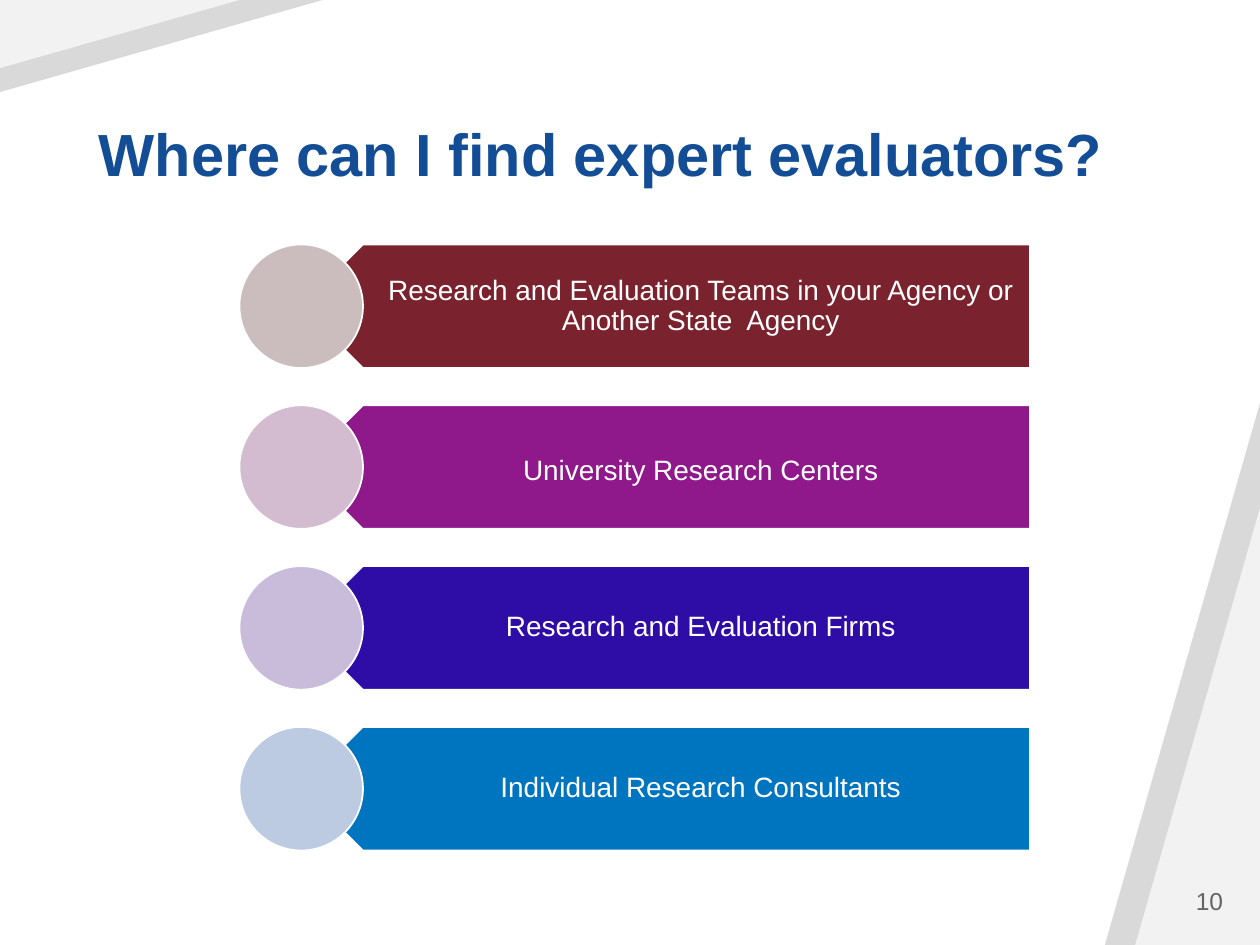
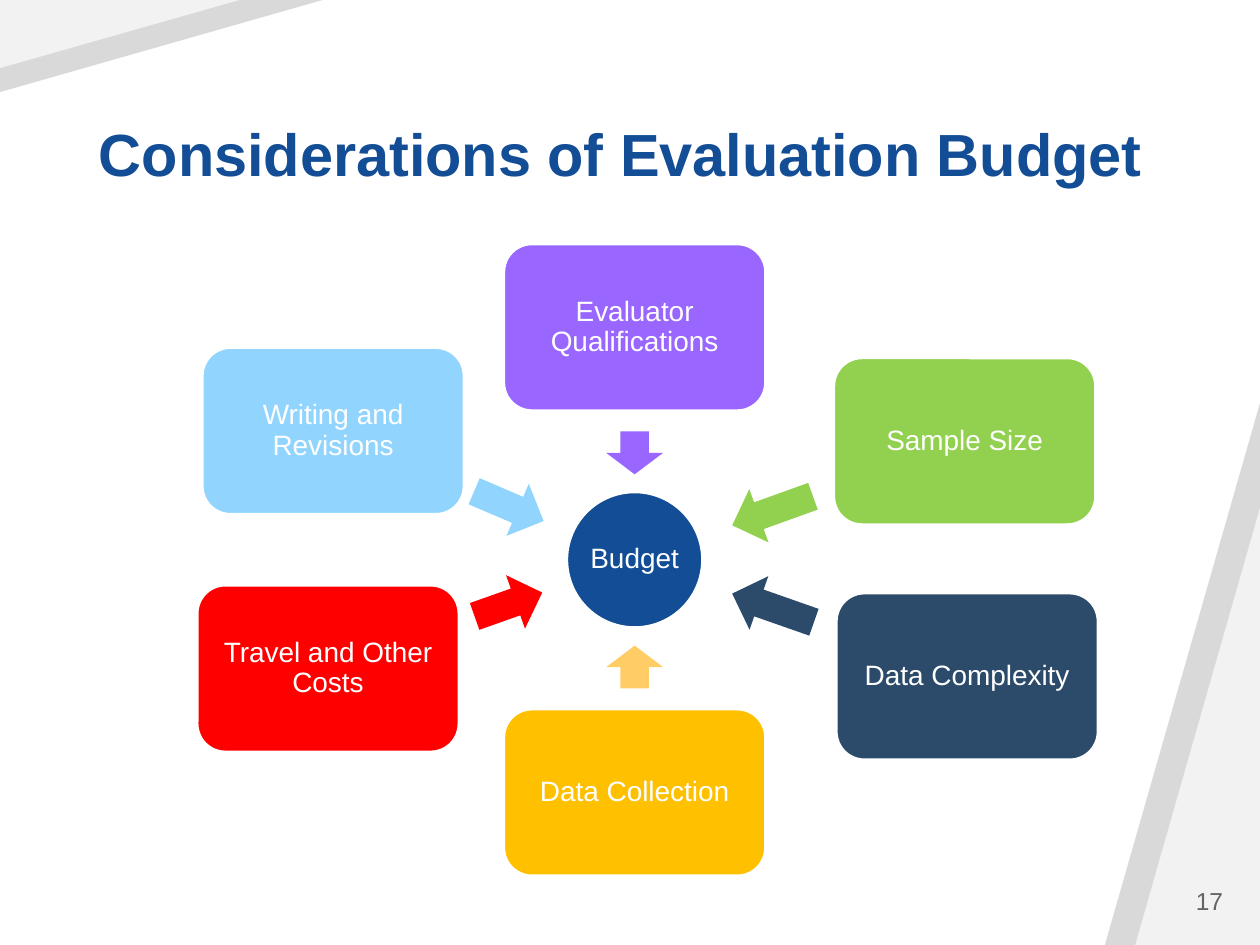
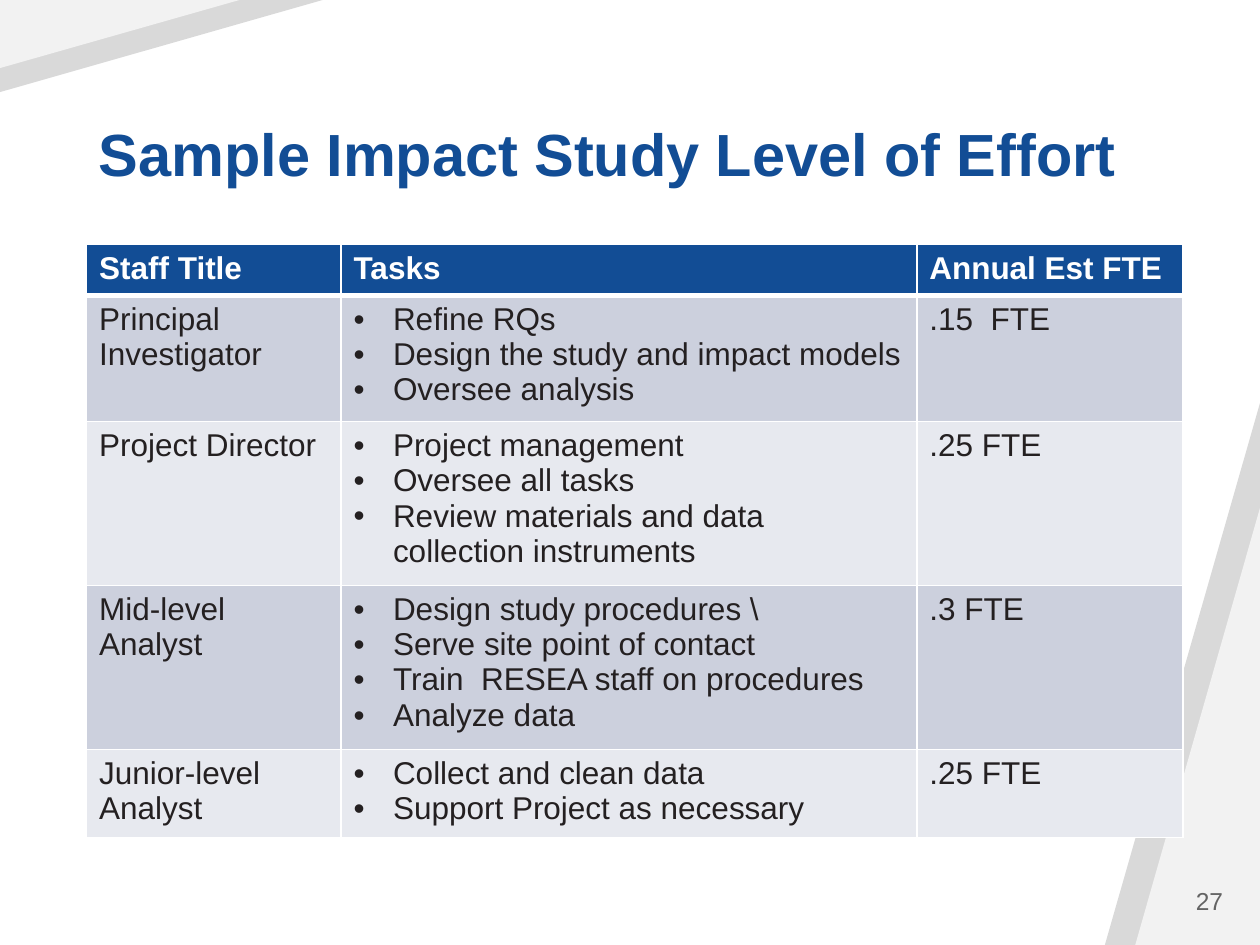
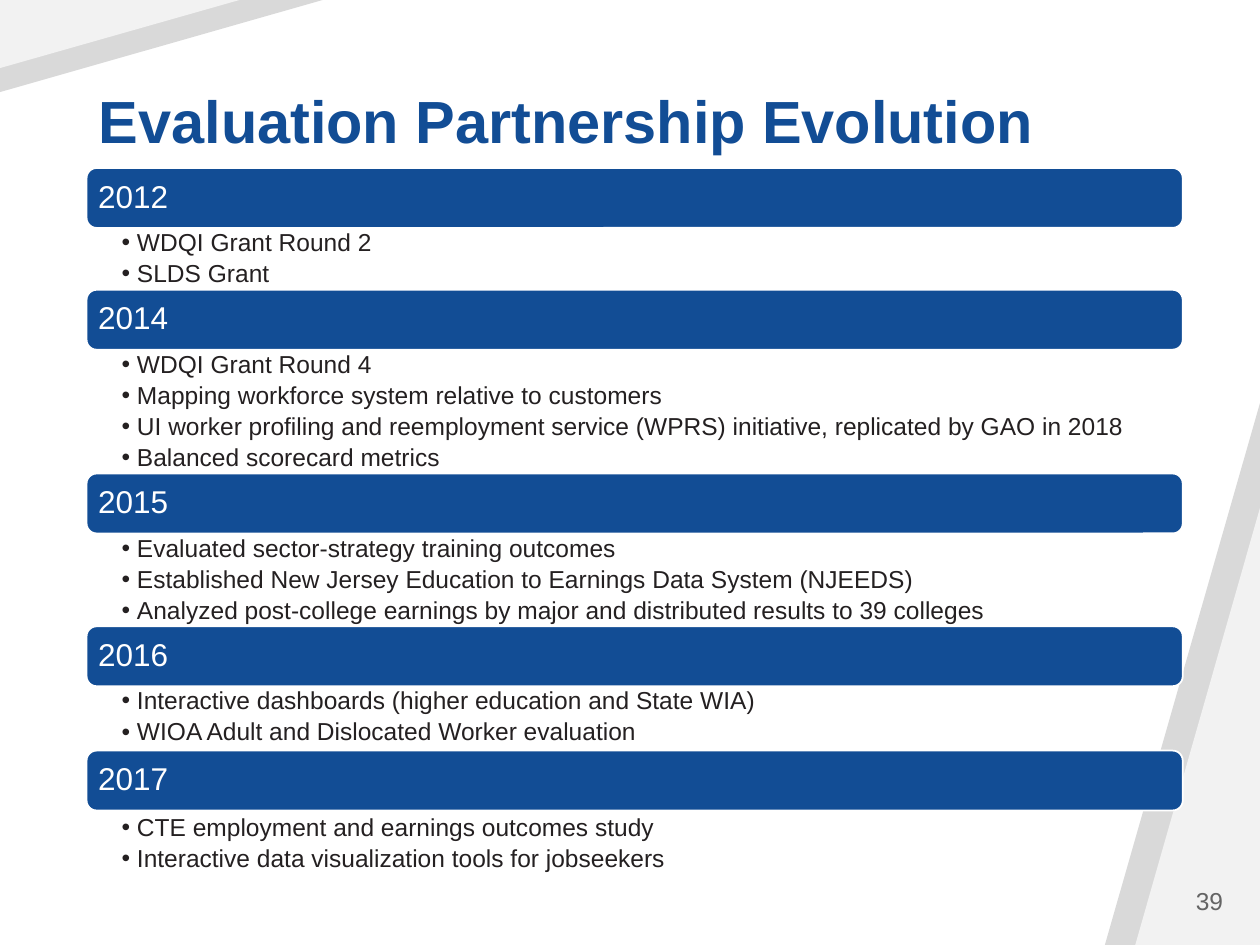
from dataclasses import dataclass
from typing import NamedTuple, Optional, Sequence, Union

import pptx
import pptx.dml.color
import pptx.enum.shapes
import pptx.enum.text
import pptx.oxml.ns
import pptx.presentation
import pptx.shapes.autoshape
import pptx.slide
import pptx.table
import pptx.text.text
import pptx.util
from lxml import etree

Pt = pptx.util.Pt
Shape = pptx.enum.shapes.MSO_SHAPE
Anchor = pptx.enum.text.MSO_ANCHOR
Align = pptx.enum.text.PP_ALIGN


# Theme and records
@dataclass(frozen=True)
class Theme:
    font: str = "Arial"
    blue: str = "124D95"
    white: str = "FFFFFF"
    ink: str = "242021"
    page_grey: str = "646464"
    band_dark: str = "D9D9D9"
    band_light: str = "F2F2F2"
    row_dark: str = "CCD0DD"
    row_light: str = "E7E9EF"
    title_size: float = 34
    heading_size: float = 18
    label_size: float = 16
    small_size: float = 14


THEME = Theme()
CONTENT_LEFT, CONTENT_WIDTH = 49.5, 626.4


class Box(NamedTuple):
    left: float
    top: float
    width: float
    height: float


class Insets(NamedTuple):
    left: float = 7.2
    top: float = 3.6
    right: float = 7.2
    bottom: float = 3.6


class CornerBand(NamedTuple):
    box: Box
    fill: str
    rotation: float


class Source(NamedTuple):
    label: str
    fill: str
    dot_fill: str
    extra_top: float = 0


class Factor(NamedTuple):
    label: str
    left: float
    top: float
    fill: str
    arrow: Box
    rotation: float
    arrow_fill: Optional[str] = None


class Staff(NamedTuple):
    title: str
    tasks: Sequence[str]
    effort: str


class Era(NamedTuple):
    year: str
    events: Sequence[str]
    gap: float = 0


# Slide content
BANDS = [
    CornerBand(Box(631.4, 230.4, 88.6, 309.6), THEME.band_dark, 0),
    CornerBand(Box(648.7, 290.2, 71.3, 249.8), THEME.band_light, 0),
    CornerBand(Box(0, 0, 184.3, 52.6), THEME.band_dark, 180),
    CornerBand(Box(0, 0, 136.8, 38.9), THEME.band_light, 180),
]

SOURCES = [
    Source("Research and Evaluation Teams in your Agency or Another State  Agency",
           "7A232E", "CBBDBE"),
    Source("University Research Centers", "8F198A", "D3BCCF", extra_top=5),
    Source("Research and Evaluation Firms", "2E0DA6", "C9BCDB"),
    Source("Individual Research Consultants", "0075BF", "BCCAE2"),
]

FACTORS = [
    Factor("Evaluator Qualifications", 288.2, 139.7, "9966FF",
           Box(350.4, 242.6, 24.5, 32.4), 270),
    Factor("Sample Size", 476.8, 204.8, "92D050", Box(417, 275.7, 49, 32.4), 340.2),
    Factor("Data Complexity", 478.2, 339.2, "2C4B6A", Box(417, 331.2, 49.5, 32.4), 19.3),
    Factor("Data Collection", 288.2, 405.5, "FFC000",
           Box(350.4, 365, 24.5, 32.4), 90, "FFCC66"),
    Factor("Travel and Other Costs", 113, 334.7, "FF0000",
           Box(270, 329.2, 41, 32.4), 160.5),
    Factor("Writing and Revisions", 115.9, 198.9, "91D5FF",
           Box(269.2, 273, 43.2, 32.4), 203.2),
]

STAFF = [
    Staff("Principal Investigator",
          ["Refine RQs", "Design the study and impact models", "Oversee analysis"],
          ".15  FTE"),
    Staff("Project Director",
          ["Project management", "Oversee all tasks",
           "Review materials and data collection instruments"],
          ".25 FTE"),
    Staff("Mid-level Analyst",
          ["Design study procedures \\", "Serve site point of contact",
           "Train  RESEA staff on procedures", "Analyze data"],
          ".3 FTE"),
    Staff("Junior-level Analyst",
          ["Collect and clean data", "Support Project as necessary"],
          ".25 FTE"),
]

ERAS = [
    Era("2012", ["WDQI Grant Round 2", "SLDS Grant"]),
    Era("2014", [
        "WDQI Grant Round 4",
        "Mapping workforce system relative to customers",
        "UI worker profiling and reemployment service (WPRS) initiative, "
        "replicated by GAO in 2018",
        "Balanced scorecard metrics",
    ]),
    Era("2015", [
        "Evaluated sector-strategy training outcomes",
        "Established New Jersey Education to Earnings Data System (NJEEDS)",
        "Analyzed post-college earnings by major and distributed results to 39 colleges",
    ]),
    Era("2016", [
        "Interactive dashboards (higher education and State WIA)",
        "WIOA Adult and Dislocated Worker evaluation",
    ]),
    Era("2017", [
        "CTE employment and earnings outcomes study",
        "Interactive data visualization tools for jobseekers",
    ], gap=1.4),
]


# Drawing helpers
def rgb(value: str) -> pptx.dml.color.RGBColor:
    return pptx.dml.color.RGBColor.from_string(value)


def add_bullet(para: pptx.text.text._Paragraph, indent: float) -> None:
    props = para._p.get_or_add_pPr()
    props.set("marL", str(Pt(indent)))
    props.set("indent", str(-Pt(indent)))
    font = etree.SubElement(props, pptx.oxml.ns.qn("a:buFont"))
    font.set("typeface", THEME.font)
    mark = etree.SubElement(props, pptx.oxml.ns.qn("a:buChar"))
    mark.set("char", "•")


def write(frame: pptx.text.text.TextFrame, text: Union[str, Sequence[str]], *,
          size: float, color: str, bold: bool = False,
          align: Align = Align.LEFT, line_spacing: Optional[float] = None,
          space_after: Optional[float] = None, bullet_indent: float = 0) -> None:
    lines = [text] if isinstance(text, str) else text
    for index, line in enumerate(lines):
        para = frame.paragraphs[0] if index == 0 else frame.add_paragraph()
        para.alignment = align
        para.line_spacing = line_spacing
        para.space_after = None if space_after is None else Pt(space_after)
        if bullet_indent:
            add_bullet(para, bullet_indent)
        span = para.add_run()
        span.text = line
        span.font.name = THEME.font
        span.font.size = Pt(size)
        span.font.bold = bold
        span.font.color.rgb = rgb(color)


def set_frame(frame: pptx.text.text.TextFrame, insets: Insets, anchor: Anchor) -> None:
    frame.word_wrap = True
    frame.vertical_anchor = anchor
    frame.margin_left, frame.margin_top, frame.margin_right, frame.margin_bottom = map(
        Pt, insets)


def add_text(page: pptx.slide.Slide, box: Box, text: Union[str, Sequence[str]], *,
             insets: Insets = Insets(), anchor: Anchor = Anchor.MIDDLE,
             **text_format) -> None:
    frame = page.shapes.add_textbox(*map(Pt, box)).text_frame
    set_frame(frame, insets, anchor)
    write(frame, text, **text_format)


def add_solid(page: pptx.slide.Slide, kind: Shape, box: Box, fill: str, *,
              rotation: float = 0, outlined: bool = False
              ) -> pptx.shapes.autoshape.Shape:
    shape = page.shapes.add_shape(kind, *map(Pt, box))
    shape.shadow.inherit = False
    shape.rotation = rotation
    shape.fill.solid()
    shape.fill.fore_color.rgb = rgb(fill)
    if outlined:
        shape.line.color.rgb = rgb(THEME.white)
        shape.line.width = Pt(1)
    else:
        shape.line.fill.background()
    return shape


def add_label(shape: pptx.shapes.autoshape.Shape, text: str, *, inset: float,
              size: float, align: Align = Align.CENTER) -> None:
    set_frame(shape.text_frame, Insets(inset, inset, inset, inset), Anchor.MIDDLE)
    write(shape.text_frame, text, size=size, color=THEME.white, align=align,
          line_spacing=0.9)


def add_page(deck: pptx.presentation.Presentation, title: str, number: int,
             title_top: float = 28.8) -> pptx.slide.Slide:
    page = deck.slides.add_slide(deck.slide_layouts[6])
    for band in BANDS:
        triangle = add_solid(page, Shape.ISOSCELES_TRIANGLE, band.box, band.fill,
                             rotation=band.rotation)
        triangle.adjustments[0] = 1
    add_text(page, Box(CONTENT_LEFT, title_top, CONTENT_WIDTH, 82.8), title,
             anchor=Anchor.BOTTOM, size=THEME.title_size, color=THEME.blue,
             bold=True, line_spacing=0.9)
    add_text(page, Box(605.2, 500.4, 100.8, 28.8), str(number),
             size=THEME.small_size, color=THEME.page_grey, align=Align.RIGHT)
    return page


# Slide bodies
def draw_sources(page: pptx.slide.Slide) -> None:
    height, pitch = 70.6, 91.9
    for index, source in enumerate(SOURCES):
        top = 139.7 + index * pitch
        add_solid(page, Shape.PENTAGON, Box(172, top, 416.5, height), source.fill,
                  rotation=180, outlined=True)
        add_text(page, Box(190, top, 398.5, height), source.label,
                 insets=Insets(31, 5 + source.extra_top, 8.6, 5),
                 size=THEME.label_size, color=THEME.white, align=Align.CENTER,
                 line_spacing=0.9)
        add_solid(page, Shape.OVAL, Box(136.8, top, height, height), source.dot_fill,
                  outlined=True)


def draw_budget(page: pptx.slide.Slide) -> None:
    hub = add_solid(page, Shape.OVAL, Box(324.2, 281.4, 77, 77), THEME.blue,
                    outlined=True)
    add_label(hub, "Budget", inset=1.4, size=THEME.label_size)
    for factor in FACTORS:
        add_solid(page, Shape.LEFT_ARROW, factor.arrow,
                  factor.arrow_fill or factor.fill, rotation=factor.rotation)
        card = add_solid(page, Shape.ROUNDED_RECTANGLE,
                         Box(factor.left, factor.top, 149, 94.7), factor.fill,
                         outlined=True)
        add_label(card, factor.label, inset=1.4, size=THEME.label_size)


def style_cell(cell: pptx.table._Cell, fill: str, top: float, bottom: float) -> None:
    props = cell._tc.get_or_add_tcPr()
    for side, width in {"L": 1, "R": 1, "T": top, "B": bottom}.items():
        line = etree.SubElement(props, pptx.oxml.ns.qn(f"a:ln{side}"))
        line.set("w", str(Pt(width)))
        solid = etree.SubElement(line, pptx.oxml.ns.qn("a:solidFill"))
        color = etree.SubElement(solid, pptx.oxml.ns.qn("a:srgbClr"))
        color.set("val", THEME.white)
    cell.fill.solid()
    cell.fill.fore_color.rgb = rgb(fill)


def draw_staff_table(page: pptx.slide.Slide) -> None:
    widths = [145.4, 329, 152]
    rows = [("Staff Title", "Tasks", "Annual Est FTE")]
    rows += [(staff.title, staff.tasks, staff.effort) for staff in STAFF]
    box = Box(CONTENT_LEFT, 139.7, sum(widths), 339)
    holder = page.shapes.add_table(len(rows), len(widths), *map(Pt, box))
    table = holder.table
    table.horz_banding = False
    for column, width in zip(table.columns, widths):
        column.width = Pt(width)
    for index, (row, texts) in enumerate(zip(table.rows, rows)):
        row.height = Pt(29.2)  # minimum; rows grow to fit their text
        header = index == 0
        stripe = THEME.row_dark if index % 2 else THEME.row_light
        for cell, text in zip(row.cells, texts):
            style_cell(cell, THEME.blue if header else stripe,
                       top=3 if index == 1 else 1, bottom=3 if header else 1)
            write(cell.text_frame, text, size=THEME.heading_size, bold=header,
                  color=THEME.white if header else THEME.ink,
                  bullet_indent=0 if isinstance(text, str) else 22.5)
    holder.height = Pt(box.height)


def draw_timeline(page: pptx.slide.Slide) -> None:
    bar_height, line_height = 34.2, 17.7
    top = 96.0
    for era in ERAS:
        top += era.gap
        bar = add_solid(page, Shape.ROUNDED_RECTANGLE,
                        Box(CONTENT_LEFT, top, CONTENT_WIDTH, bar_height), THEME.blue,
                        outlined=True)
        add_label(bar, era.year, inset=5, size=THEME.heading_size, align=Align.LEFT)
        top += bar_height + era.gap
        body_height = line_height * len(era.events)
        add_text(page, Box(CONTENT_LEFT, top, CONTENT_WIDTH, body_height), era.events,
                 insets=Insets(20, 1.4, 8, 1.4), anchor=Anchor.TOP,
                 size=THEME.small_size, color=THEME.ink, line_spacing=0.9,
                 space_after=2.7, bullet_indent=8.8)
        top += body_height


def main() -> None:
    deck = pptx.Presentation()
    deck.slide_width, deck.slide_height = Pt(720), Pt(540)
    draw_sources(add_page(deck, "Where can I find expert evaluators?", 10))
    draw_budget(add_page(deck, "Considerations of Evaluation Budget", 17))
    draw_staff_table(add_page(deck, "Sample Impact Study Level of Effort", 27))
    draw_timeline(add_page(deck, "Evaluation Partnership Evolution", 39, title_top=10))
    deck.save("out.pptx")


if __name__ == "__main__":
    main()
